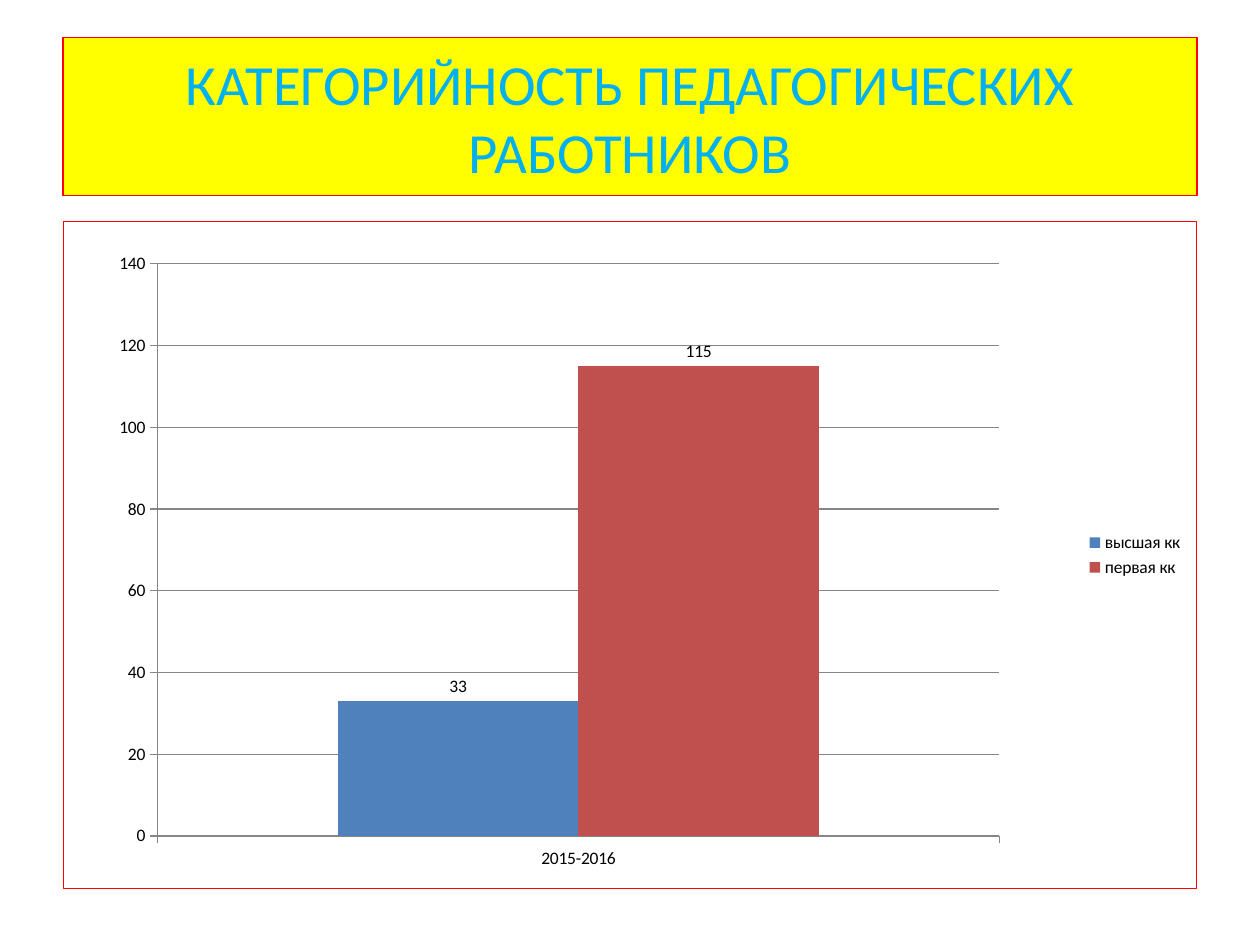
from lxml import etree
from pptx import Presentation
from pptx.chart.data import CategoryChartData
from pptx.dml.color import RGBColor
from pptx.enum.chart import (XL_CHART_TYPE as ChartType, XL_LABEL_POSITION as LabelPosition,
                             XL_LEGEND_POSITION as LegendPosition, XL_TICK_MARK as TickMark)
from pptx.enum.text import MSO_ANCHOR as Anchor, MSO_AUTO_SIZE as AutoSize, PP_ALIGN as Align
from pptx.oxml import parse_xml
from pptx.oxml.ns import nsdecls, qn
from pptx.util import Pt

FRAME = "FF0000"
FRAME_WIDTH = Pt(0.75)
AXIS = "868686"
LEFT, WIDTH = Pt(36), Pt(648)


def color(hex_string):
    return RGBColor.from_string(hex_string)


class SlideBuilder:
    font_name = "Calibri"

    def __init__(self, page):
        self.page = page

    def style_font(self, font, size, hex_string):
        font.name = self.font_name
        font.size = Pt(size)
        font.bold = False
        font.color.rgb = color(hex_string)

    def title(self, text, top, height):
        box = self.page.shapes.title
        box.left, box.top, box.width, box.height = LEFT, top, WIDTH, height
        box.fill.solid()
        box.fill.fore_color.rgb = color("FFFF00")
        box.line.color.rgb = color(FRAME)
        box.line.width = FRAME_WIDTH
        frame = box.text_frame
        frame.word_wrap = True
        frame.auto_size = AutoSize.NONE
        frame.vertical_anchor = Anchor.MIDDLE
        para = frame.paragraphs[0]
        para.alignment = Align.CENTER
        span = para.add_run()
        span.text = text
        self.style_font(span.font, 32.4, "00B0F0")

    def column_chart(self, categories, series, top, height):
        """Draw clustered columns; series holds (name, values, colour) rows."""
        data = CategoryChartData()
        data.categories = categories
        for name, values, _ in series:
            data.add_series(name, values)
        chart = self.page.shapes.add_chart(
            ChartType.COLUMN_CLUSTERED, LEFT, top, WIDTH, height, data).chart
        self.style_font(chart.font, 10, "000000")
        chart.has_title = False
        chart.has_legend = True
        chart.legend.position = LegendPosition.RIGHT
        chart.legend.include_in_layout = False

        plot = chart.plots[0]
        plot.vary_by_categories = False
        plot.gap_width, plot.overlap = 150, 0
        for column, (_, _, fill) in zip(plot.series, series):
            column.format.fill.solid()
            column.format.fill.fore_color.rgb = color(fill)
            labels = column.data_labels
            labels.show_value = True
            labels.position = LabelPosition.OUTSIDE_END

        value_axis = chart.value_axis
        value_axis.minimum_scale, value_axis.maximum_scale = 0, 140
        value_axis.major_unit = 20
        value_axis.has_major_gridlines = True
        value_axis.major_gridlines.format.line.color.rgb = color(AXIS)
        for axis in (chart.category_axis, value_axis):
            axis.major_tick_mark = TickMark.OUTSIDE
            axis.minor_tick_mark = TickMark.NONE
            axis.format.line.color.rgb = color(AXIS)
        self.place_plot(chart, x=0.083, y=0.064, w=0.743, h=0.857)
        self.frame_chart(chart)

    def place_plot(self, chart, **fractions):
        """Fix the inner plot area as fractions of the chart."""
        area = chart.element.find(".//" + qn("c:plotArea"))
        for old in area.findall(qn("c:layout")):
            area.remove(old)
        layout = etree.Element(qn("c:layout"))
        manual = etree.SubElement(layout, qn("c:manualLayout"))
        settings = {"layoutTarget": "inner", "xMode": "edge", "yMode": "edge", **fractions}
        for tag, value in settings.items():
            etree.SubElement(manual, qn("c:" + tag)).set("val", str(value))
        area.insert(0, layout)

    def frame_chart(self, chart):
        outline = parse_xml(
            f'<c:spPr {nsdecls("c", "a")}><a:noFill/><a:ln w="{FRAME_WIDTH}"><a:solidFill>'
            f'<a:srgbClr val="{FRAME}"/></a:solidFill></a:ln></c:spPr>')
        chart.element.find(qn("c:chart")).addnext(outline)


def main():
    deck = Presentation()
    deck.slide_width, deck.slide_height = Pt(720), Pt(540)
    builder = SlideBuilder(deck.slides.add_slide(deck.slide_layouts[5]))
    builder.title("КАТЕГОРИЙНОСТЬ ПЕДАГОГИЧЕСКИХ РАБОТНИКОВ", Pt(21.6), Pt(90))
    builder.column_chart(
        ["2015-2016"],
        [("высшая кк", [33], "4F81BD"), ("первая кк", [115], "C0504D")],
        Pt(126), Pt(382.3))
    deck.save("out.pptx")


if __name__ == "__main__":
    main()
